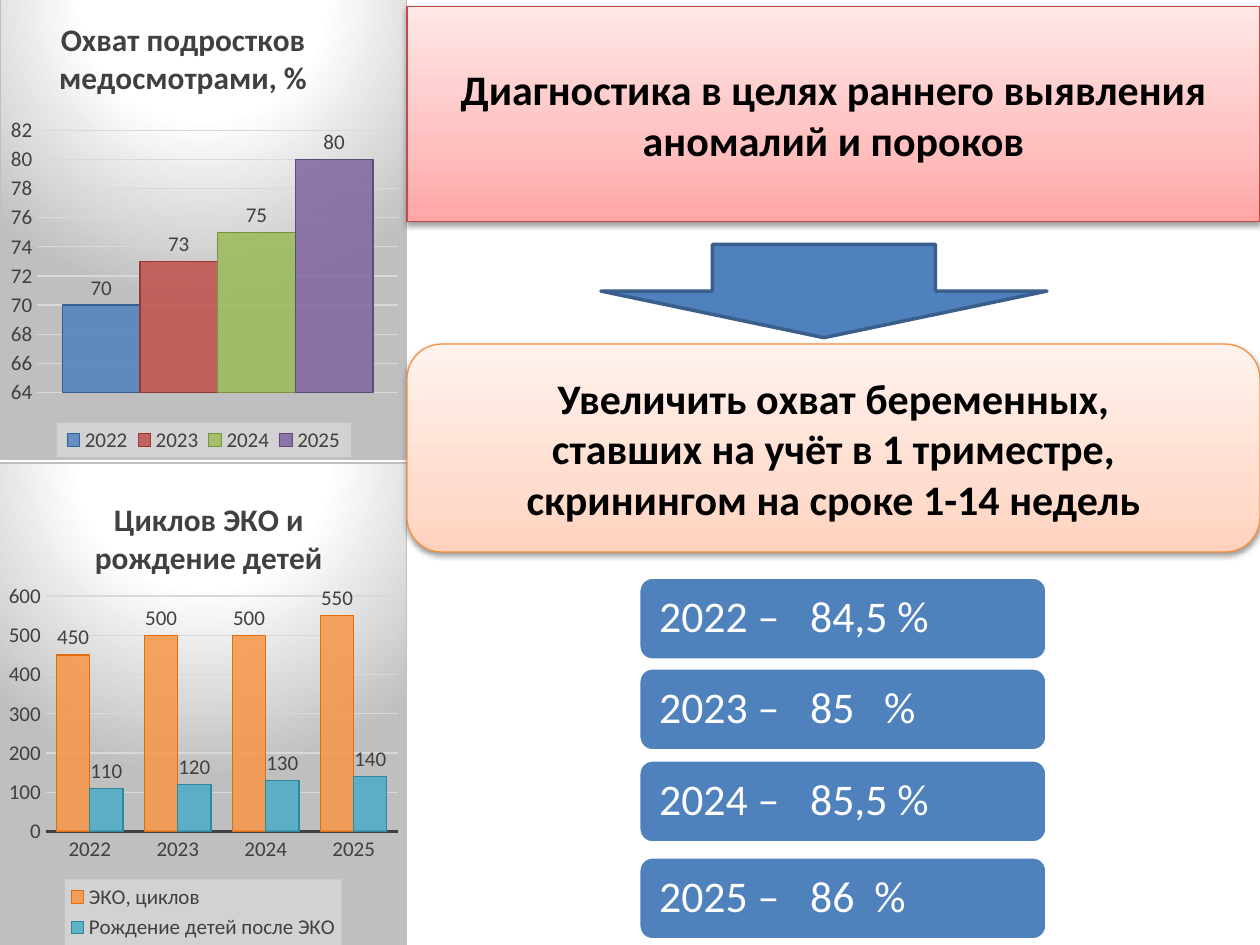
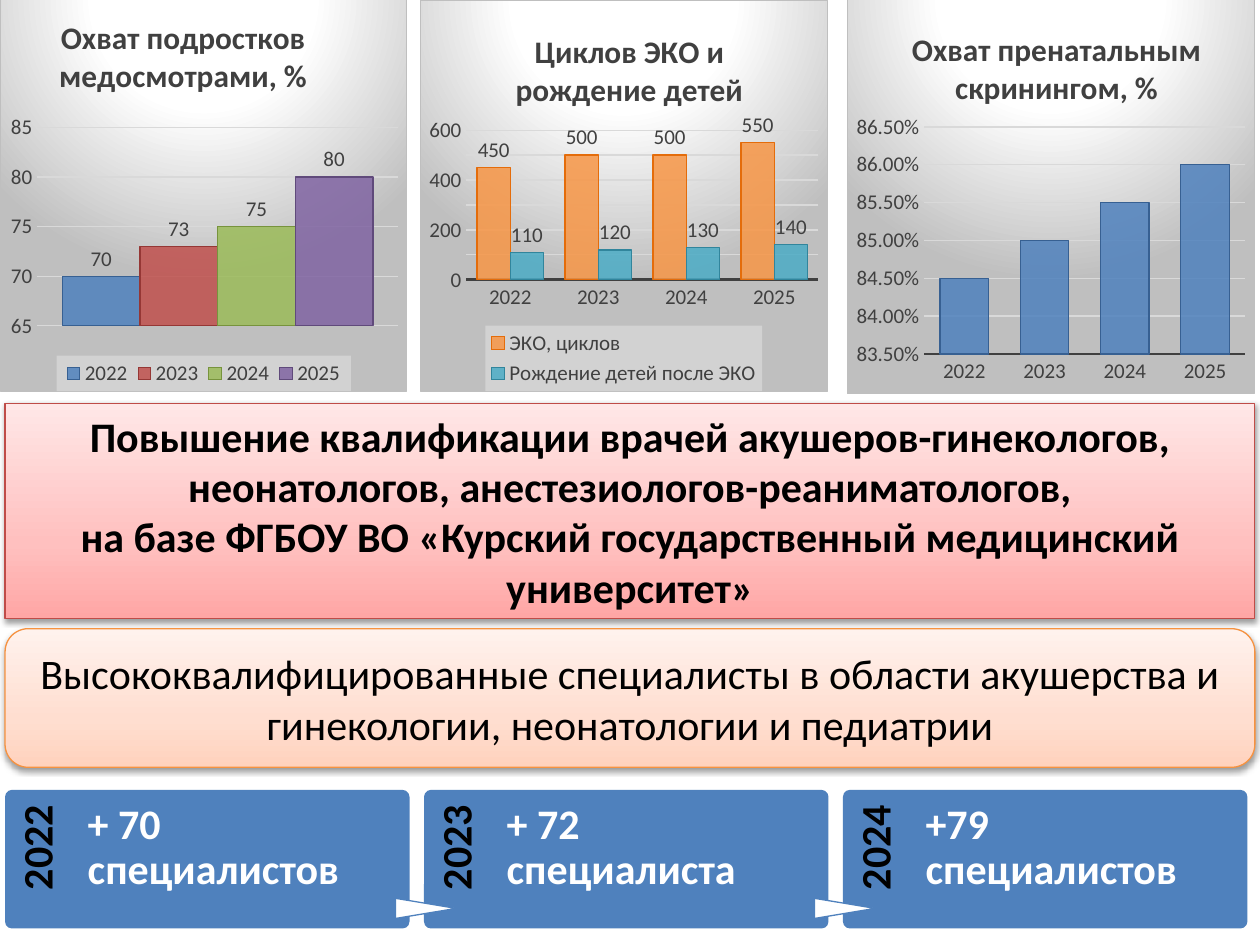
from dataclasses import dataclass
from typing import NamedTuple, Optional

from lxml.etree import SubElement
from pptx import Presentation
from pptx.chart.data import CategoryChartData
from pptx.dml.color import RGBColor
from pptx.enum.chart import (
    XL_CHART_TYPE, XL_LABEL_POSITION, XL_LEGEND_POSITION, XL_TICK_MARK)
from pptx.enum.shapes import MSO_SHAPE
from pptx.enum.text import MSO_ANCHOR, PP_ALIGN
from pptx.oxml import parse_xml
from pptx.oxml.ns import nsdecls, qn
from pptx.util import Pt

FONT = "Calibri"
BLACK, WHITE, BLUE, NAVY = "000000", "FFFFFF", "4F81BD", "3A5F8C"
INK, GRID, EDGE, PALE = "404040", "D9D9D9", "BFBFBF", "F2F2F2"
YEARS = ("2022", "2023", "2024", "2025")


class Box(NamedTuple):
    x: float
    y: float
    w: float
    h: float


class Bars(NamedTuple):
    name: str
    values: tuple[float, ...]
    fill: str
    line: str


@dataclass(frozen=True)
class Graph:
    title: str
    cats: tuple[str, ...]
    bars: tuple[Bars, ...]
    labels: bool = True
    axis: bool = True
    form: str = "General"


@dataclass(frozen=True)
class View:
    """Place of a chart in points; its parts as fractions of the chart."""
    graph: Graph
    box: Box
    head: tuple[float, float]
    plot: Box
    scale: tuple[float, float, float]
    key: Optional[Box] = None


class Style(NamedTuple):
    form: MSO_SHAPE
    stops: tuple[tuple[int, str], ...]
    line: str


class Panel(NamedTuple):
    style: Style
    box: Box
    lines: tuple[str, ...]
    bold: bool = True


class Badge(NamedTuple):
    top: float
    text: str
    tabs: tuple[float, ...]


class Card(NamedTuple):
    year: str
    text: str


ROSE = Style(MSO_SHAPE.RECTANGLE,
             ((0, "FFA6A5"), (35, "FFC0BF"), (100, "FFE7E7")), "BF4C48")
PEACH = Style(MSO_SHAPE.ROUNDED_RECTANGLE,
              ((0, "FFD2BD"), (35, "FFDED0"), (100, "FFF2ED")), "F69240")
GLOW = ((0, WHITE), (39, WHITE), (100, EDGE))

TEENS = Graph("Охват подростков медосмотрами, %", ("1",), (
    Bars("2022", (70,), BLUE, "376092"),
    Bars("2023", (73,), "C0504D", "953735"),
    Bars("2024", (75,), "9BBB59", "77933C"),
    Bars("2025", (80,), "8064A2", "604A7B")), axis=False)
BIRTHS = Graph("Циклов ЭКО и рождение детей", YEARS, (
    Bars("ЭКО, циклов", (450, 500, 500, 550), "F79646", "E46C0A"),
    Bars("Рождение детей после ЭКО", (110, 120, 130, 140),
         "4BACC6", "31859C")))
SCREEN = Graph("Охват пренатальным скринингом, %", YEARS, (
    Bars("Скрининг", (0.845, 0.85, 0.855, 0.86), BLUE, "376092"),),
    labels=False, form="0.00%")

VIEWS = (
    (View(BIRTHS, Box(-0.5, 264.2, 233.3, 276.5), (0.22, 0.06),
          Box(0.113, 0.276, 0.865, 0.488), (0, 600, 100),
          Box(0.16, 0.863, 0.68, 0.137)),
     View(TEENS, Box(0, -1.5, 232.6, 264.2), (0.13, 0.03),
          Box(0.09, 0.287, 0.89, 0.569), (64, 82, 2),
          Box(0.138, 0.925, 0.725, 0.075))),
    (View(BIRTHS, Box(239.8, 0, 233.3, 223.9), (0.22, 0.06),
          Box(0.113, 0.332, 0.865, 0.383), (0, 600, 100),
          Box(0.16, 0.832, 0.68, 0.168)),
     View(SCREEN, Box(483.8, -1.5, 233.3, 226.8), (0.145, 0.06),
          Box(0.189, 0.326, 0.789, 0.574), (0.835, 0.865, 0.005)),
     View(TEENS, Box(0, -1.5, 232.6, 225.4), (0.13, 0.03),
          Box(0.09, 0.329, 0.89, 0.505), (65, 85, 5),
          Box(0.138, 0.91, 0.725, 0.09))),
)
PANELS = (
    (Panel(ROSE, Box(232.6, 3.6, 487.4, 123.1),
           ("Диагностика в целях раннего выявления аномалий и пороков",)),
     Panel(PEACH, Box(232.6, 196.6, 487.4, 118.8),
           ("Увеличить охват беременных,", "ставших на учёт в 1 триместре,",
            "скринингом на сроке 1-14 недель"))),
    (Panel(ROSE, Box(2.9, 230.4, 714.2, 123.1),
           ("Повышение квалификации врачей акушеров-гинекологов, "
            "неонатологов, анестезиологов-реаниматологов,",
            "на базе ФГБОУ ВО «Курский государственный медицинский "
            "университет»")),
     Panel(PEACH, Box(2.9, 359.3, 714.2, 79.2),
           ("Высококвалифицированные специалисты в области акушерства и "
            "гинекологии, неонатологии и педиатрии",), False)),
)
BADGES = (Badge(329.8, "2022 –\t84,5 %", (86.3,)),
          Badge(381.6, "2023 –\t85\t%", (86.3, 128.5)),
          Badge(434.2, "2024 –\t85,5 %", (86.3,)),
          Badge(489.6, "2025 –\t86\t%", (86.3, 123)))
CARDS = (Card("2022", "+ 70 специалистов"), Card("2023", "+ 72 специалиста"),
         Card("2024", "+79 специалистов"))


def tint(code: str) -> RGBColor:
    return RGBColor.from_string(code)


def pts(box: Box) -> list[Pt]:
    return [Pt(n) for n in box]


def ink(font, size: float, code: str, bold: bool = False) -> None:
    font.name, font.size, font.bold = FONT, Pt(size), bold
    font.color.rgb = tint(code)


def paint(form, fill: str, line: Optional[str] = None,
          width: float = 0.75) -> None:
    form.fill.solid()
    form.fill.fore_color.rgb = tint(fill)
    if line is None:
        form.line.fill.background()
    else:
        form.line.color.rgb = tint(line)
        form.line.width = Pt(width)


def blend(stops: tuple[tuple[int, str], ...], course: str) -> str:
    """Gradient fill XML; course is its a:lin or a:path element."""
    marks = "".join(f'<a:gs pos="{pos * 1000}"><a:srgbClr val="{tint(code)}"/>'
                    "</a:gs>" for pos, code in stops)
    return (f'<a:gradFill {nsdecls("a")} rotWithShape="1">'
            f"<a:gsLst>{marks}</a:gsLst>{course}</a:gradFill>")


def skin(fill: str, line: str = "") -> object:
    return parse_xml(f'<c:spPr {nsdecls("c", "a")}>{fill}{line}</c:spPr>')


def place(part, index: int, spot: tuple[float, ...]) -> None:
    """Give a chart part a fixed spot: x and y, or x, y, w and h."""
    for old in part.findall(qn("c:layout")):
        part.remove(old)
    target = '<c:layoutTarget val="inner"/>' if index == 0 else ""
    modes = '<c:xMode val="edge"/><c:yMode val="edge"/>'
    sides = "".join(f'<c:{side} val="{n}"/>' for side, n in zip("xywh", spot))
    part.insert(index, parse_xml(
        f'<c:layout {nsdecls("c")}><c:manualLayout>{target}{modes}{sides}'
        "</c:manualLayout></c:layout>"))


def style_axes(chart, view: View) -> None:
    cat, val = chart.category_axis, chart.value_axis
    for axis in (cat, val):
        axis.major_tick_mark = axis.minor_tick_mark = XL_TICK_MARK.NONE
        ink(axis.tick_labels.font, 12, INK)
    cat.visible = view.graph.axis
    cat.format.line.color.rgb = tint(INK)
    cat.format.line.width = Pt(1.5)
    val.minimum_scale, val.maximum_scale, val.major_unit = view.scale
    val.format.line.fill.background()
    val.major_gridlines.format.line.color.rgb = tint(GRID)
    val.major_gridlines.format.line.width = Pt(0.75)
    val.tick_labels.number_format = view.graph.form
    val.tick_labels.number_format_is_linked = False


def style_bars(plot, graph: Graph) -> None:
    plot.gap_width, plot.overlap, plot.vary_by_categories = 65, 0, False
    for row, bars in zip(plot.series, graph.bars):
        paint(row.format, bars.fill, bars.line)
        solid = row._element.find(qn("c:spPr")).find(qn("a:solidFill"))
        SubElement(solid[0], qn("a:alpha"), val="85000")
        if graph.labels:
            row.data_labels.show_value = True
            row.data_labels.position = XL_LABEL_POSITION.OUTSIDE_END
            ink(row.data_labels.font, 12, INK)


def add_graph(slide, view: View) -> None:
    graph = view.graph
    data = CategoryChartData(number_format=graph.form)
    data.categories = graph.cats
    for bars in graph.bars:
        data.add_series(bars.name, bars.values)
    chart = slide.shapes.add_chart(
        XL_CHART_TYPE.COLUMN_CLUSTERED, *pts(view.box), data).chart
    ink(chart.font, 10, BLACK)
    chart.has_title = True
    frame = chart.chart_title.text_frame
    frame.text = graph.title
    ink(frame.paragraphs[0].runs[0].font, 18, INK, True)
    style_axes(chart, view)
    style_bars(chart.plots[0], graph)

    body = chart._chartSpace.find(qn("c:chart"))
    place(body.find(qn("c:title")), 1, view.head)
    place(body.find(qn("c:plotArea")), 0, view.plot)
    halo = ('<a:path path="circle"><a:fillToRect l="50000" t="-80000" '
            'r="50000" b="180000"/></a:path>')
    rim = (f'<a:ln w="{Pt(0.75)}"><a:solidFill><a:srgbClr val="{tint(EDGE)}"/>'
           "</a:solidFill></a:ln>")
    body.addnext(skin(blend(GLOW, halo), rim))

    chart.has_legend = view.key is not None
    if view.key:
        chart.legend.position = XL_LEGEND_POSITION.BOTTOM
        chart.legend.include_in_layout = False
        ink(chart.legend.font, 12, INK)
        key = body.find(qn("c:legend"))
        place(key, 1, view.key)
        key.find(qn("c:overlay")).addnext(skin(
            f'<a:solidFill><a:srgbClr val="{tint(PALE)}">'
            '<a:alpha val="39000"/></a:srgbClr></a:solidFill>'))


def add_form(slide, form: MSO_SHAPE, box: Box, fill: str,
             line: Optional[str] = None, width: float = 0.75):
    shape = slide.shapes.add_shape(form, *pts(box))
    shape.shadow.inherit = False
    paint(shape, fill, line, width)
    return shape


def write(shape, text: str, size: float, code: str, bold: bool,
          align: PP_ALIGN, anchor: MSO_ANCHOR,
          inset: tuple[float, ...] = (7.2, 3.6, 7.2, 3.6),
          spacing: float = 1, tabs: tuple[float, ...] = ()) -> None:
    frame = shape.text_frame
    frame.word_wrap, frame.vertical_anchor = True, anchor
    (frame.margin_left, frame.margin_top,
     frame.margin_right, frame.margin_bottom) = map(Pt, inset)
    frame.text = text
    for para in frame.paragraphs:
        if tabs:
            stops = SubElement(para._p.get_or_add_pPr(), qn("a:tabLst"))
            for tab in tabs:
                SubElement(stops, qn("a:tab"), pos=str(Pt(tab)), algn="l")
        para.alignment, para.line_spacing = align, spacing
        for run in para.runs:
            ink(run.font, size, code, bold)


def add_panel(slide, panel: Panel) -> None:
    style = panel.style
    shape = add_form(slide, style.form, panel.box, WHITE, style.line)
    props = shape._element.spPr
    props.replace(props.find(qn("a:solidFill")), parse_xml(
        blend(style.stops, '<a:lin ang="16200000" scaled="1"/>')))
    shade = SubElement(props.find(qn("a:effectLst")), qn("a:outerShdw"),
                       blurRad=str(Pt(3.1)), dist=str(Pt(1.6)),
                       dir="5400000", rotWithShape="0")
    code = SubElement(shade, qn("a:srgbClr"), val=BLACK)
    SubElement(code, qn("a:alpha"), val="38000")
    write(shape, "\n".join(panel.lines), 24, BLACK, panel.bold,
          PP_ALIGN.CENTER, MSO_ANCHOR.MIDDLE)


def add_badge(slide, badge: Badge) -> None:
    shape = add_form(slide, MSO_SHAPE.ROUNDED_RECTANGLE,
                     Box(365, badge.top, 233.3, 47.5), BLUE, WHITE, 2)
    write(shape, badge.text, 25, WHITE, False, PP_ALIGN.LEFT,
          MSO_ANCHOR.MIDDLE, (9.4, 7.2, 9.4, 7.2), 0.9, badge.tabs)


def add_card(slide, index: int, card: Card) -> None:
    left, top = 2.9 + 239.4 * index, 451.4
    shape = add_form(slide, MSO_SHAPE.ROUNDED_RECTANGLE,
                     Box(left, top, 231.1, 79.2), BLUE)
    shape.adjustments[0] = 0.05
    write(shape, card.text, 24, WHITE, True, PP_ALIGN.LEFT, MSO_ANCHOR.TOP,
          (46.1, 6.5, 13, 0), 0.9)
    year = slide.shapes.add_textbox(*pts(Box(left - 9.4, top + 9.4, 64.8, 46)))
    year.rotation = 270
    write(year, card.year, 24, BLACK, True, PP_ALIGN.RIGHT, MSO_ANCHOR.TOP,
          (0, 6.5, 8.6, 0), 0.9)
    if index:
        wedge = add_form(slide, MSO_SHAPE.FLOWCHART_EXTRACT,
                         Box(left - 4.7, top + 50.4, 11.5, 34.6), WHITE, BLUE)
        wedge.rotation = 90


def main() -> None:
    deck = Presentation()
    deck.slide_width, deck.slide_height = Pt(720), Pt(540)
    slides = []
    for views, panels in zip(VIEWS, PANELS):
        slide = deck.slides.add_slide(deck.slide_layouts[6])
        for view in views:
            add_graph(slide, view)
        for panel in panels:
            add_panel(slide, panel)
        slides.append(slide)
    first, second = slides
    add_form(first, MSO_SHAPE.DOWN_ARROW, Box(343.4, 139.7, 254.9, 53.3),
             BLUE, NAVY, 2)
    for badge in BADGES:
        add_badge(first, badge)
    for index, card in enumerate(CARDS):
        add_card(second, index, card)
    deck.save("out.pptx")


if __name__ == "__main__":
    main()
